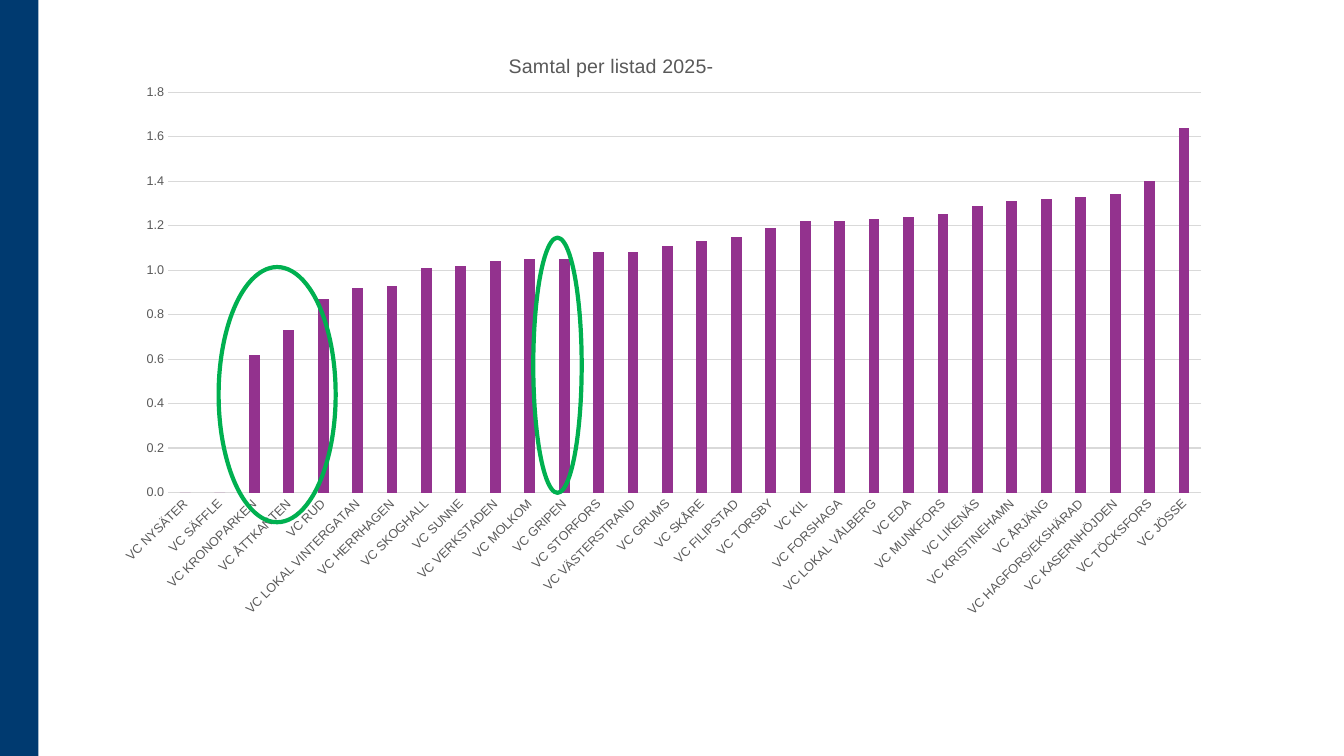
from lxml import etree
from pptx import Presentation
from pptx.chart.data import CategoryChartData
from pptx.dml.color import RGBColor
from pptx.enum.chart import XL_CHART_TYPE, XL_TICK_MARK
from pptx.enum.shapes import MSO_SHAPE
from pptx.oxml.ns import qn
from pptx.util import Cm, Pt

COLUMN = XL_CHART_TYPE.COLUMN_CLUSTERED
NO_TICK = XL_TICK_MARK.NONE
RECTANGLE = MSO_SHAPE.RECTANGLE
OVAL = MSO_SHAPE.OVAL

NAVY = RGBColor(0x00, 0x3A, 0x70)
PURPLE = RGBColor(0x93, 0x32, 0x8E)
GREEN = RGBColor(0x00, 0xB0, 0x50)
GREY = RGBColor(0x59, 0x59, 0x59)
LIGHT_GREY = RGBColor(0xD9, 0xD9, 0xD9)

CALLS_PER_LISTED = {
    "VC NYSÄTER": 0, "VC SÄFFLE": 0, "VC KRONOPARKEN": 0.62,
    "VC ÅTTKANTEN": 0.73, "VC RUD": 0.87, "VC LOKAL VINTERGATAN": 0.92,
    "VC HERRHAGEN": 0.93, "VC SKOGHALL": 1.01, "VC SUNNE": 1.02,
    "VC VERKSTADEN": 1.04, "VC MOLKOM": 1.05, "VC GRIPEN": 1.05,
    "VC STORFORS": 1.08, "VC VÄSTERSTRAND": 1.08, "VC GRUMS": 1.11,
    "VC SKÅRE": 1.13, "VC FILIPSTAD": 1.15, "VC TORSBY": 1.19,
    "VC KIL": 1.22, "VC FORSHAGA": 1.22, "VC LOKAL VÅLBERG": 1.23,
    "VC EDA": 1.24, "VC MUNKFORS": 1.25, "VC LIKENÄS": 1.29,
    "VC KRISTINEHAMN": 1.31, "VC ÅRJÄNG": 1.32,
    "VC HAGFORS/EKSHÄRAD": 1.33, "VC KASERNHÖJDEN": 1.34,
    "VC TÖCKSFORS": 1.4, "VC JÖSSE": 1.64,
}


def make_layout(**settings):
    """Return a manual chart layout; settings must follow schema order."""
    layout = etree.Element(qn("c:layout"))
    manual = etree.SubElement(layout, qn("c:manualLayout"))
    for name, value in settings.items():
        etree.SubElement(manual, qn(f"c:{name}")).set("val", str(value))
    return layout


class SlideBuilder:
    font_name = "Arial"

    def __init__(self, slide):
        self.slide = slide

    def style_font(self, font, size):
        font.name = self.font_name
        font.size = Pt(size)
        font.bold = False
        font.color.rgb = GREY

    def shape(self, kind, x, y, w, h, fill=None, line=None):
        sp = self.slide.shapes.add_shape(kind, Cm(x), Cm(y), Cm(w), Cm(h))
        sp.shadow.inherit = False
        if fill is None:
            sp.fill.background()
        else:
            sp.fill.solid()
            sp.fill.fore_color.rgb = fill
        if line is None:
            sp.line.fill.background()
        else:
            sp.line.color.rgb = line
            sp.line.width = Pt(3)

    def column_chart(self, title, values, x, y, w, h):
        data = CategoryChartData(number_format="0.00")
        data.categories = list(values)
        data.add_series("Samtal per listad", list(values.values()))
        chart = self.slide.shapes.add_chart(
            COLUMN, Cm(x), Cm(y), Cm(w), Cm(h), data).chart
        self.style_font(chart.font, 10)
        chart.has_legend = False

        plot = chart.plots[0]
        plot.gap_width = 219
        plot.overlap = -27
        plot.vary_by_categories = False
        fill = plot.series[0].format.fill
        fill.solid()
        fill.fore_color.rgb = PURPLE

        self.chart_title(chart, title)
        self.axes(chart)
        plot_area = chart.element.xpath(".//c:plotArea")[0]
        for old in plot_area.findall(qn("c:layout")):
            plot_area.remove(old)
        plot_area.insert(0, make_layout(
            layoutTarget="inner", xMode="edge", yMode="edge",
            x=0.06, y=0.11, w=0.92, h=0.66))

    def chart_title(self, chart, text):
        chart.has_title = True
        title = chart.chart_title
        title.include_in_layout = False
        r = title.text_frame.paragraphs[0].add_run()
        r.text = text
        self.style_font(r.font, 14)
        for old in title.element.findall(qn("c:layout")):
            title.element.remove(old)
        title.element.find(qn("c:tx")).addnext(
            make_layout(xMode="edge", yMode="edge", x=0.36, y=0.04))

    def axes(self, chart):
        cat, val = chart.category_axis, chart.value_axis
        for axis in (cat, val):
            axis.major_tick_mark = axis.minor_tick_mark = NO_TICK
            self.style_font(axis.tick_labels.font, 9)
        val.minimum_scale, val.maximum_scale, val.major_unit = 0, 1.8, 0.2
        val.tick_labels.number_format = "0.0"
        val.tick_labels.number_format_is_linked = False
        val.format.line.fill.background()
        for line in (cat.format.line, val.major_gridlines.format.line):
            line.color.rgb = LIGHT_GREY
            line.width = Pt(0.75)
        label_body = chart.element.xpath(".//c:catAx/c:txPr/a:bodyPr")[0]
        label_body.set("rot", str(-45 * 60000))


def main():
    prs = Presentation()
    prs.slide_width, prs.slide_height = Cm(33.87), Cm(19.05)
    s = SlideBuilder(prs.slides.add_slide(prs.slide_layouts[6]))
    s.shape(RECTANGLE, 0, 0, 0.97, 19.05, fill=NAVY)
    s.column_chart("Samtal per listad 2025-", CALLS_PER_LISTED,
                   2.54, 0.64, 28.3, 15.29)
    s.shape(OVAL, 13.44, 5.99, 1.22, 6.43, line=GREEN)
    s.shape(OVAL, 5.51, 6.73, 2.95, 6.43, line=GREEN)
    prs.save("out.pptx")


if __name__ == "__main__":
    main()
